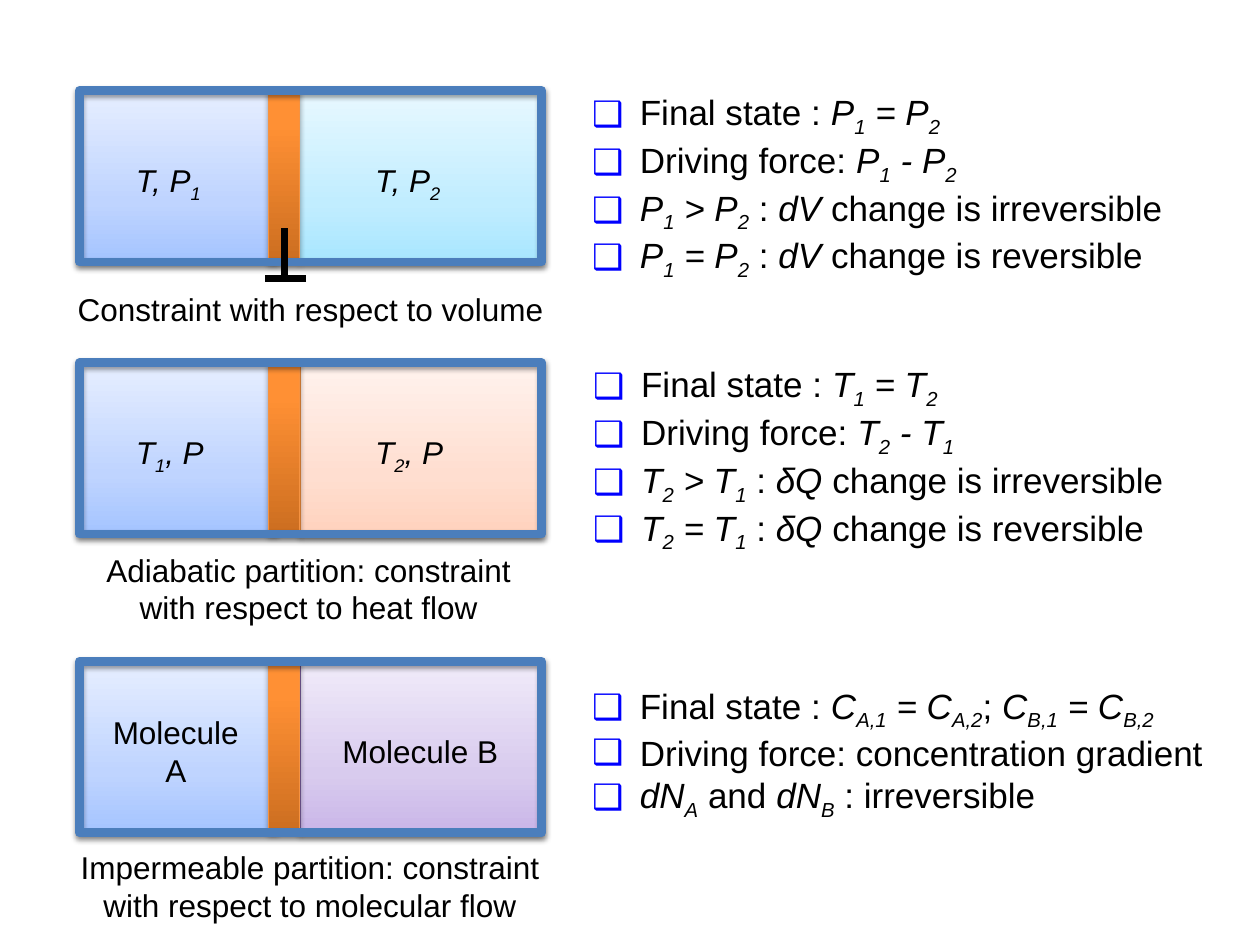
from copy import deepcopy

from pptx import Presentation
from pptx import util as u
from pptx.dml.color import RGBColor
from pptx.enum import shapes, text
from pptx.oxml import parse_xml
from pptx.oxml.ns import nsdecls, qn

BLACK = RGBColor(0, 0, 0)
FRAME_BLUE = RGBColor(0x4B, 0x7E, 0xBC)
ORANGE = RGBColor(0xF6, 0x92, 0x40)
PURPLE = RGBColor(0x7D, 0x60, 0xA0)
BULLET = RGBColor(0, 0, 0xFF)


def gradient(middle, *colours):
    """Pair three hex colours with stops at the start, middle and end."""
    return list(zip((0, middle, 1), map(RGBColor.from_string, colours)))


BLUE_FILL = gradient(0.35, "A4C4FF", "BFD4FF", "E6EEFF")
CYAN_FILL = gradient(0.35, "A7E6FF", "C1EDFF", "E7F8FF")
PEACH_FILL = gradient(0.35, "FFD2BD", "FFDED0", "FFF2ED")
LILAC_FILL = gradient(0.35, "C9B5E8", "D8CBEE", "F0EAF9")
WALL_FILL = gradient(0.8, "CC6E20", "FF9034", "FF9136")


def add_bullet(para):
    """Give a paragraph a hanging blue square bullet."""
    props = para._p.get_or_add_pPr()
    props.set("marL", str(u.Inches(0.38)))
    props.set("indent", str(-u.Inches(0.38)))
    props.append(parse_xml(f'<a:buClr {nsdecls("a")}><a:srgbClr val="{BULLET}"/></a:buClr>'))
    props.append(parse_xml(f'<a:buFont {nsdecls("a")} typeface="Arial"/>'))
    props.append(parse_xml(f'<a:buChar {nsdecls("a")} char="❑"/>'))


def add_text(page, box, lines, size=18, align=None, bullet=False, wrap=True):
    """Place lines in which *...* is italic and {...} is subscript."""
    frame = page.shapes.add_textbox(*map(u.Inches, box)).text_frame
    frame.word_wrap = wrap
    frame.auto_size = text.MSO_AUTO_SIZE.SHAPE_TO_FIT_TEXT
    for index, line in enumerate(lines):
        para = frame.add_paragraph() if index else frame.paragraphs[0]
        para.alignment = align
        if bullet:
            add_bullet(para)
        for part, words in enumerate(line.split("*")):
            for piece, content in enumerate(words.replace("}", "{").split("{")):
                if content:
                    span = para.add_run()
                    span.text = content
                    span.font.name = "Arial"
                    span.font.size = u.Pt(size)
                    span.font.color.rgb = BLACK
                    span.font.italic = part % 2 == 1
                    if piece % 2:
                        span.font._element.set("baseline", "-25000")


def add_block(page, box, stops=None, line=None, width=0.75, opacity=38, distance=1.6):
    """Place a rectangle with an optional gradient and a soft shadow."""
    block = page.shapes.add_shape(shapes.MSO_SHAPE.RECTANGLE, *map(u.Inches, box))
    if stops:
        block.fill.gradient()
        block.fill.gradient_angle = 90
        stop_list = block._element.spPr.find(".//" + qn("a:gsLst"))
        stop_list.append(deepcopy(stop_list[0]))
        for stop, (position, colour) in zip(block.fill.gradient_stops, stops):
            stop.position = position
            stop.color.rgb = colour
    else:
        block.fill.background()
    if line is None:
        block.line.fill.background()
    else:
        block.line.color.rgb = line
        block.line.width = u.Pt(width)
    block.shadow.inherit = False
    block._element.spPr.find(qn("a:effectLst")).append(parse_xml(
        f'<a:outerShdw {nsdecls("a")} blurRad="{u.Pt(3.1)}" dist="{u.Pt(distance)}" '
        f'dir="5400000" rotWithShape="0"><a:srgbClr val="{BLACK}">'
        f'<a:alpha val="{opacity}000"/></a:srgbClr></a:outerShdw>'))


def add_vessel(page, left, top, right_fill, right_line, labels):
    """Place a framed vessel with two compartments, a wall and labels."""
    height = 1.36
    add_block(page, (left + 1.75, top + 0.01, 1.92, height), right_fill, right_line)
    add_block(page, (left, top, 1.58, height), BLUE_FILL)
    add_block(page, (left + 1.5, top, 0.25, height), WALL_FILL, ORANGE,
              opacity=35, distance=1.8)
    for words, across, down, width, align in labels:
        add_text(page, (left + across, top + down, width, 0.4), [words], align=align)
    add_block(page, (left, top, 3.67, height), line=FRAME_BLUE, width=5)


def add_stopper(page, centre, top):
    """Place the T-shaped pin that holds the wall."""
    foot = top + 0.4
    for ends in ((centre, top, centre, top + 0.42),
                 (centre + 0.17, foot, centre - 0.16, foot)):
        bar = page.shapes.add_connector(shapes.MSO_CONNECTOR.STRAIGHT, *map(u.Inches, ends))
        bar.line.color.rgb = BLACK
        bar.line.width = u.Pt(3.75)
        bar._element.spPr.append(parse_xml(f'<a:effectLst {nsdecls("a")}/>'))


def state_labels(first, second):
    """Lay out the state variables of both compartments."""
    return [(first, 0.35, 0.51, 0.85, None), (second, 2.25, 0.51, 0.87, None)]


def main():
    """Build the slide of three constrained systems."""
    deck = Presentation()
    deck.slide_width, deck.slide_height = u.Inches(10), u.Inches(7.5)
    page = deck.slides.add_slide(deck.slide_layouts[6])
    centre = text.PP_ALIGN.CENTER
    molecules = [("Molecule A", 0.14, 0.36, 1.25, centre),
                 ("Molecule B", 1.99, 0.51, 1.5, None)]
    systems = [
        (0.72, CYAN_FILL, None, state_labels("*T, P{1}*", "*T, P{2}*"),
         (0.5, 2.25, 3.93, 0.4), "Constraint with respect to volume",
         (4.6, 0.67, 4.79, 1.45),
         ["Final state : *P{1} = P{2}*", "Driving force: *P{1} - P{2}*",
          "*P{1} > P{2}* : *dV* change is irreversible",
          "*P{1} = P{2}* : *dV* change is reversible"]),
        (2.88, PEACH_FILL, ORANGE, state_labels("*T{1}, P*", "*T{2}, P*"),
         (0.7, 4.32, 3.5, 0.71), "Adiabatic partition: constraint with respect to heat flow",
         (4.61, 2.83, 4.79, 1.45),
         ["Final state : *T{1} = T{2}*", "Driving force: *T{2} - T{1}*",
          "*T{2} > T{1}* : *δQ* change is irreversible",
          "*T{2} = T{1}* : *δQ* change is reversible"]),
        (5.25, LILAC_FILL, PURPLE, molecules,
         (0.43, 6.68, 4.06, 0.71),
         "Impermeable partition: constraint with respect to molecular flow",
         (4.6, 5.38, 5.09, 1.11),
         ["Final state : *C{A,1} = C{A,2}*; *C{B,1} = C{B,2}*",
          "Driving force: concentration gradient",
          "*dN{A}* and *dN{B}* : irreversible"]),
    ]
    for top, fill, line, labels, caption_box, caption, facts_box, facts in systems:
        add_vessel(page, 0.63, top, fill, line, labels)
        add_text(page, caption_box, [caption], align=centre, wrap=caption_box[3] > 0.4)
        add_text(page, facts_box, facts, size=20, bullet=True, wrap=False)
    add_stopper(page, 2.26, 1.81)
    deck.save("out.pptx")


if __name__ == "__main__":
    main()
